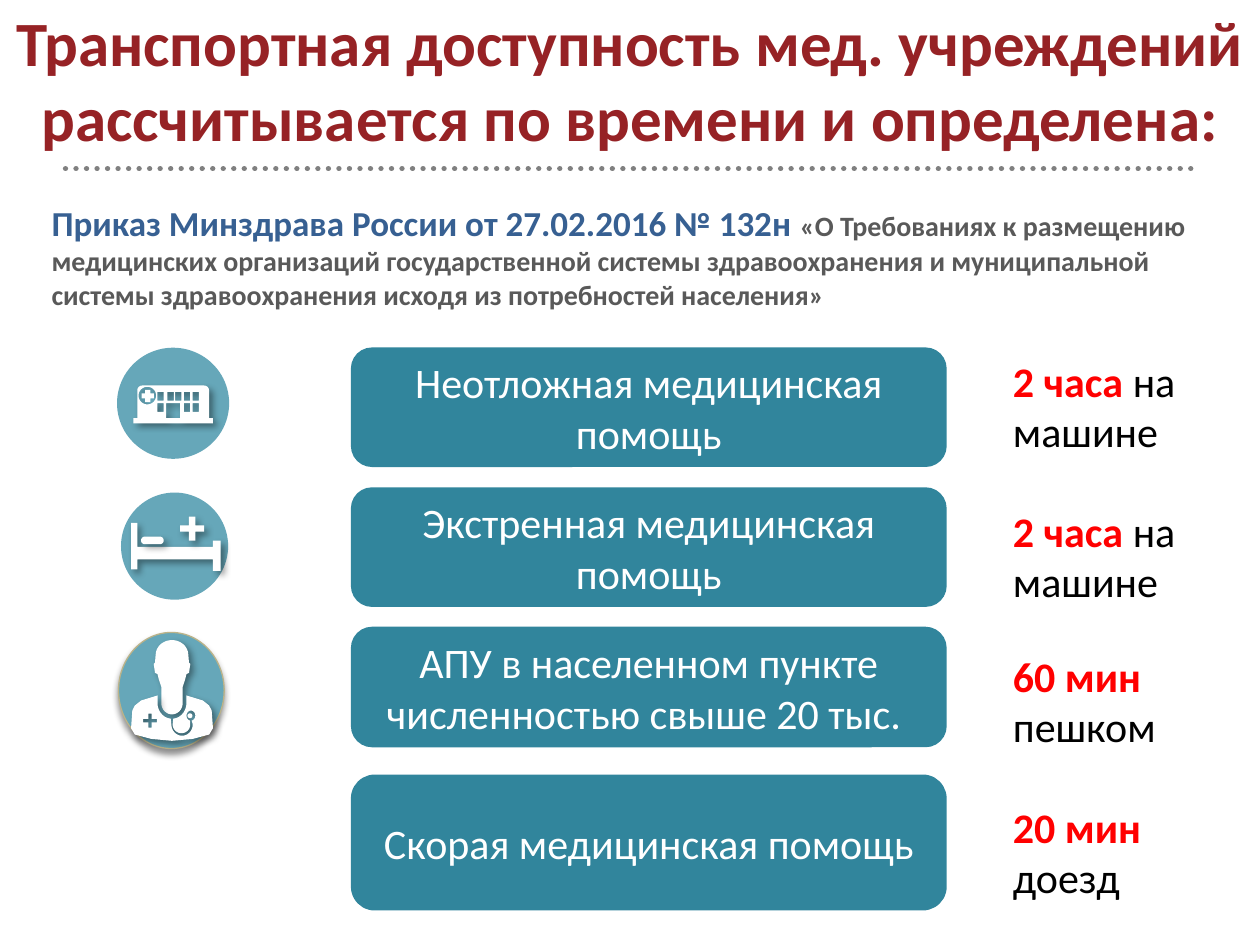
from dataclasses import dataclass
from math import cos, radians, sin

from lxml import etree
from pptx import Presentation
from pptx.dml.color import RGBColor
from pptx.enum.dml import MSO_LINE
from pptx.enum.shapes import MSO_CONNECTOR, MSO_SHAPE
from pptx.enum.text import MSO_ANCHOR, PP_ALIGN
from pptx.oxml.ns import qn
from pptx.util import Cm, Pt

ROUND_RECT, ELLIPSE = MSO_SHAPE.ROUNDED_RECTANGLE, MSO_SHAPE.OVAL
STRAIGHT, DOTTED = MSO_CONNECTOR.STRAIGHT, MSO_LINE.ROUND_DOT
LEFT, CENTER = PP_ALIGN.LEFT, PP_ALIGN.CENTER
TOP, MIDDLE = MSO_ANCHOR.TOP, MSO_ANCHOR.MIDDLE

FONT = "Calibri"
ICON_UNIT = 0.0254
COLORS = {
    "title": "962225", "order": "376092", "body": "595959", "rule": "808080",
    "box": "31859C", "disc": "66A7B9", "rim": "BBB389",
    "accent": "FF0000", "black": "000000", "white": "FFFFFF",
}

Points = list[tuple[float, float]]


@dataclass
class Run:
    text: str
    size: float
    color: str
    bold: bool = False


@dataclass
class Care:
    name: str
    top: float
    height: float
    limit: str
    means: str
    limit_top: float
    limit_width: float


CARES = [
    Care("Неотложная медицинская помощь", 7.04, 2.34, "2 часа ", "на машине", 7.04, 4.78),
    Care("Экстренная медицинская помощь", 9.86, 2.34, "2 часа ", "на машине", 10.06, 4.78),
    Care("АПУ в населенном пункте численностью свыше 20 тыс. ", 12.67, 2.36,
         "60 мин ", "пешком", 12.98, 3.61),
    Care("Скорая медицинская помощь", 15.65, 2.67, "20 мин ", "доезд", 16.03, 3.61),
]


def rgb(name: str) -> RGBColor:
    return RGBColor.from_string(COLORS[name])


def write(sp, runs: list[Run], *, align=LEFT, anchor=TOP) -> None:
    tf = sp.text_frame
    tf.word_wrap = True
    tf.vertical_anchor = anchor
    p = tf.paragraphs[0]
    p.alignment = align
    for run in runs:
        r = p.add_run()
        r.text = run.text
        r.font.name = FONT
        r.font.size = Pt(run.size)
        r.font.bold = run.bold
        r.font.color.rgb = rgb(run.color)


def add_text(s, left: float, top: float, width: float, height: float,
             runs: list[Run], **layout) -> None:
    sp = s.shapes.add_textbox(Cm(left), Cm(top), Cm(width), Cm(height))
    write(sp, runs, **layout)


def paint(sp, fill: str, line: str | None = None, weight: float = 0,
          shadow: tuple[int, int] | None = None) -> None:
    sp.shadow.inherit = False
    sp.fill.solid()
    sp.fill.fore_color.rgb = rgb(fill)
    if line:
        sp.line.color.rgb = rgb(line)
        sp.line.width = Pt(weight)
    else:
        sp.line.fill.background()
    if shadow:
        alpha, angle = shadow
        effects = sp._element.spPr.find(qn("a:effectLst"))
        outer = etree.SubElement(effects, qn("a:outerShdw"), blurRad=str(Pt(4)),
                                 dist=str(Pt(3)), dir=str(angle * 60000),
                                 algn="ctr", rotWithShape="0")
        color = etree.SubElement(outer, qn("a:srgbClr"), val=COLORS["black"])
        etree.SubElement(color, qn("a:alpha"), val=str(alpha * 1000))


def add_disc(group, left: float, top: float, width: float, height: float,
             fill: str = "disc", **look) -> None:
    sp = group.shapes.add_shape(ELLIPSE, Cm(left), Cm(top), Cm(width), Cm(height))
    paint(sp, fill, **look)


def arc(cx: float, cy: float, rx: float, ry: float, start: int, end: int) -> Points:
    steps = max(6, abs(end - start) // 12)
    angles = [radians(start + (end - start) * i / steps) for i in range(steps + 1)]
    return [(cx + rx * cos(a), cy + ry * sin(a)) for a in angles]


def rect(left: float, top: float, width: float, height: float) -> Points:
    right, bottom = left + width, top + height
    return [(left, top), (right, top), (right, bottom), (left, bottom)]


def cross(cx: float, cy: float, reach: float, half: float) -> Points:
    return [(cx - half, cy - reach), (cx + half, cy - reach), (cx + half, cy - half),
            (cx + reach, cy - half), (cx + reach, cy + half), (cx + half, cy + half),
            (cx + half, cy + reach), (cx - half, cy + reach), (cx - half, cy + half),
            (cx - reach, cy + half), (cx - reach, cy - half), (cx - half, cy - half)]


def add_figure(group, *contours: Points, shadow: tuple[int, int] | None = (40, 45)) -> None:
    scaled = [[(Cm(x * ICON_UNIT), Cm(y * ICON_UNIT)) for x, y in c] for c in contours]
    builder = group.shapes.build_freeform(*scaled[0][0], scale=1.0)
    builder.add_line_segments(scaled[0][1:], close=True)
    for contour in scaled[1:]:
        builder.move_to(*contour[0])
        builder.add_line_segments(contour[1:], close=True)
    paint(builder.convert_to_shape(), "white", shadow=shadow)


def draw_doctor(group) -> None:
    add_disc(group, 2.39, 12.75, 2.13, 2.34, line="rim", weight=0.75, shadow=(43, 90))
    head = [(125, 535), (123, 534), (122, 527), (123, 526),
            *arc(136.5, 520, 13, 12, 180, 360),
            (150, 526), (151, 527), (150, 534), (148, 535), (147, 539), (145, 545),
            *arc(136.5, 558, 8.5, 9, 0, 180), (128, 545), (126, 539)]
    add_figure(group, head)
    body = [(169, 578), (168, 564), (166, 560), (161, 556), (148, 552),
            *arc(136.5, 558, 11.5, 12.5, 0, 85),
            *arc(144, 575, 7, 7, 180, 0),
            *arc(151.5, 568, 3.5, 4, 100, 440),
            *arc(144.5, 575, 8.5, 9, 0, 180),
            *arc(136.5, 558, 11.5, 12.5, 95, 180),
            (125, 552), (112, 556), (107, 560), (105, 564), (104, 578), (107, 583),
            (120, 586.5), (136.5, 588), (153, 586.5), (166, 583)]
    add_figure(group, body, cross(119, 572, 5.5, 1.3))
    add_disc(group, 3.78, 14.38, 0.1, 0.1, "white")


def draw_bed(group) -> None:
    add_disc(group, 2.44, 9.93, 2.16, 2.16)
    add_figure(group, [(169, 429), (169, 434), (109, 434), (109, 415), (104, 415), (104, 452),
                       (109, 452), (109, 444), (169, 444), (169, 453), (175, 453), (175, 429)])
    add_figure(group, arc(115, 429, 3, 3, 90, 270) + arc(127, 429, 3, 3, -90, 90))
    add_figure(group, cross(152.5, 419.5, 9.5, 2.5))


def draw_hospital(group) -> None:
    add_disc(group, 2.36, 7.01, 2.26, 2.24)
    walls = [(166, 332), *arc(162, 310, 4, 4, 0, -90), *arc(113, 310, 4, 4, 270, 180),
             (109, 332), (106, 332), (106, 336), (169, 336), (169, 332)]
    upper = [rect(x, 311, 5, 7) for x in (125, 133, 139, 146, 153)]
    lower = [rect(x, 320, 5, 7) for x in (125, 146, 153)]
    add_figure(group, walls, arc(117, 314, 7, 7, 0, 360), rect(132, 320, 11, 12),
               *upper, *lower)
    add_figure(group, cross(117.3, 314.3, 4.8, 2), shadow=None)


def draw_care(s, care: Care) -> None:
    sp = s.shapes.add_shape(ROUND_RECT, Cm(7.11), Cm(care.top), Cm(11.94), Cm(care.height))
    paint(sp, "box", line="box", weight=2)
    write(sp, [Run(care.name, 24, "white")], align=CENTER, anchor=MIDDLE)
    add_text(s, 20.17, care.limit_top, care.limit_width, 2.31,
             [Run(care.limit, 24, "accent", True), Run(care.means, 24, "black")])


def draw_rule(s) -> None:
    rule = s.shapes.add_connector(STRAIGHT, Cm(1.32), Cm(3.4), Cm(24.13), Cm(3.4))
    rule.line.color.rgb = rgb("rule")
    rule.line.width = Pt(3)
    rule.line.dash_style = DOTTED
    props = rule._element.spPr
    props.find(qn("a:ln")).set("cap", "rnd")
    etree.SubElement(props, qn("a:effectLst"))


def main() -> None:
    prs = Presentation()
    prs.slide_width, prs.slide_height = Cm(25.4), Cm(19.05)
    s = prs.slides.add_slide(prs.slide_layouts[6])
    draw_rule(s)
    add_text(s, 0, 0, 25.4, 3.18,
             [Run("Транспортная доступность мед. учреждений рассчитывается "
                  "по времени и определена:", 36, "title", True)],
             align=CENTER, anchor=MIDDLE)
    add_text(s, 0.79, 3.94, 24.03, 2.62,
             [Run("Приказ Минздрава России от 27.02.2016 № 132н ", 20, "order", True),
              Run("«О Требованиях к размещению медицинских организаций государственной "
                  "системы здравоохранения и муниципальной системы здравоохранения "
                  "исходя из потребностей населения»", 16, "body", True)])
    for care in CARES:
        draw_care(s, care)
    for draw_icon in (draw_doctor, draw_bed, draw_hospital):
        draw_icon(s.shapes.add_group_shape())
    prs.save("out.pptx")


if __name__ == "__main__":
    main()
